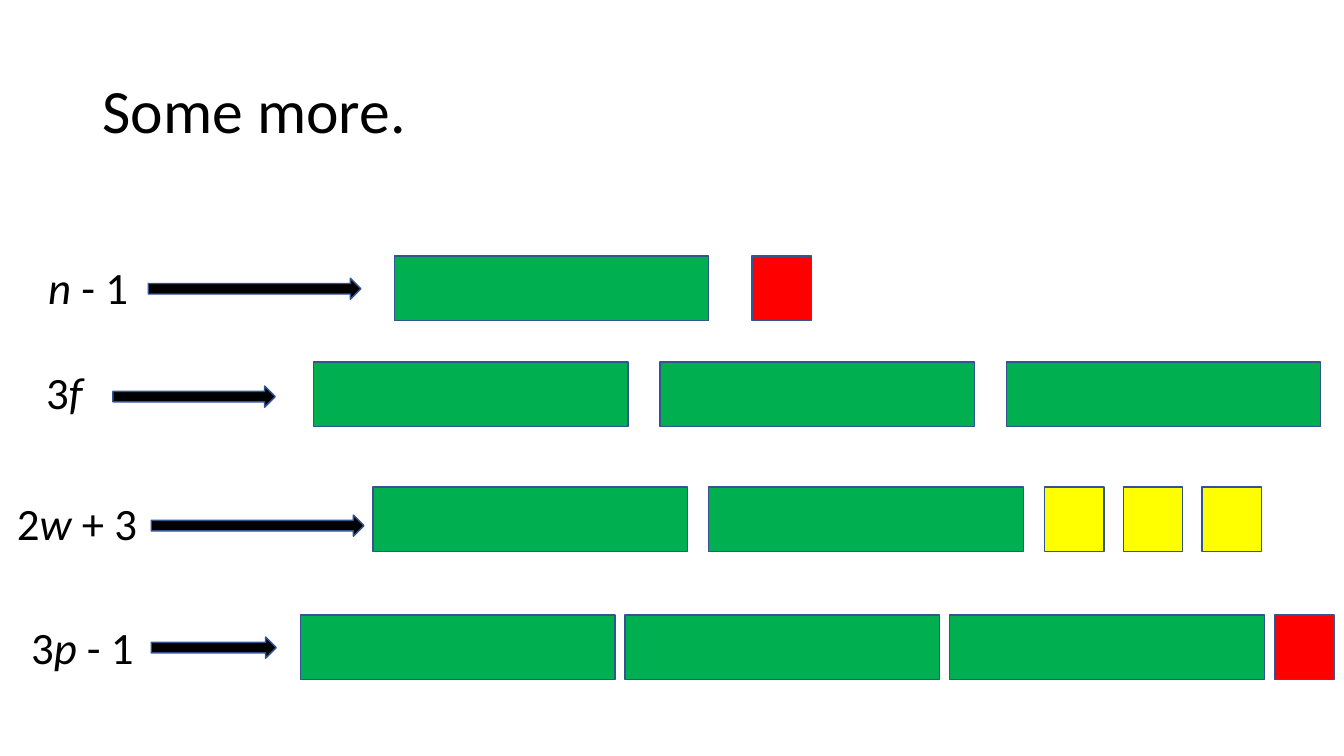
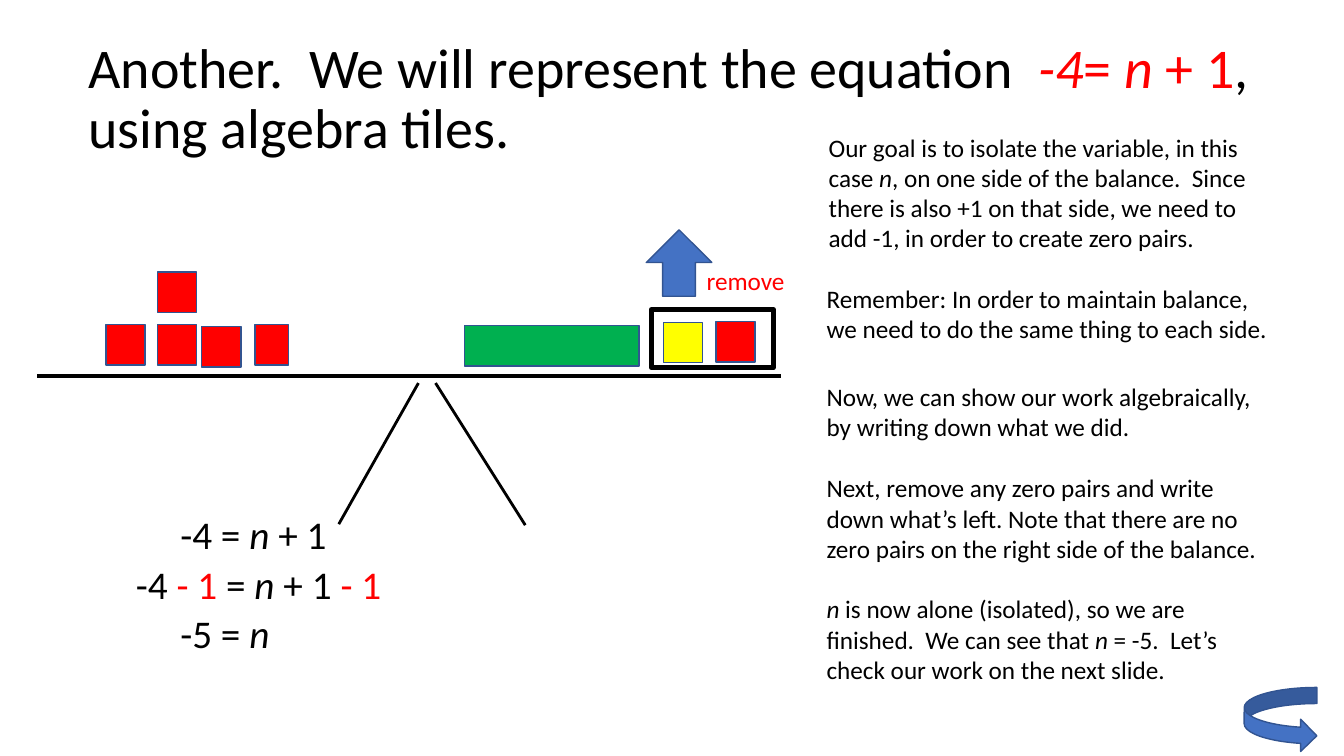
"""Build two slides on representing expressions and equations with algebra tiles."""
import pptx
import pptx.dml.color
import pptx.enum.shapes
import pptx.enum.text
import pptx.oxml.ns
import pptx.util
from lxml import etree

Inches = pptx.util.Inches
Pt = pptx.util.Pt
hex_color = pptx.dml.color.RGBColor.from_string
MSO_SHAPE = pptx.enum.shapes.MSO_SHAPE

BLACK, RED, YELLOW, GREEN = "000000", "FF0000", "FFFF00", "00B050"
BLUE, OUTLINE = "4472C4", "325491"
FONT = "Calibri"
TITLE_HEIGHT = 1.45


def add_text(slide, at, markup, size, title_style=False):
    """Add a text box; _ switches italics and | switches red in the markup."""
    frame = slide.shapes.add_textbox(*map(Inches, at)).text_frame
    frame.word_wrap = True
    paragraph = frame.paragraphs[0]
    paragraph.font.name = FONT
    paragraph.font.size = Pt(size)
    if title_style:
        frame.vertical_anchor = pptx.enum.text.MSO_ANCHOR.MIDDLE
        paragraph.line_spacing = 0.9
    for color_index, colored in enumerate(markup.split("|")):
        for italic_index, words in enumerate(colored.split("_")):
            if words:
                run = paragraph.add_run()
                run.text = words
                run.font.color.rgb = hex_color(RED if color_index % 2 else BLACK)
                if italic_index % 2:
                    run.font.italic = True


def add_shape(slide, kind, at, fill, line=OUTLINE, line_width=1):
    """Add an outlined preset shape, hollow when fill is None."""
    shape = slide.shapes.add_shape(kind, *map(Inches, at))
    shape.shadow.inherit = False
    if fill:
        shape.fill.solid()
        shape.fill.fore_color.rgb = hex_color(fill)
    else:
        shape.fill.background()
    shape.line.color.rgb = hex_color(line)
    shape.line.width = Pt(line_width)


deck = pptx.Presentation()
deck.slide_width = Inches(13.33)
deck.slide_height = Inches(7.5)
blank = deck.slide_layouts[6]

expressions = deck.slides.add_slide(blank)
add_text(expressions, (0.92, 0.4, 11.5, TITLE_HEIGHT), "Some more.", 44, True)

BAR_WIDTH, UNIT_WIDTH, TILE_HEIGHT, UNIT_PITCH = 3.12, 0.59, 0.64, 0.78
expression_rows = [
    ("_n_ - 1", (0.38, 2.15, 1.25), (1.47, 2.76, 2.11), 2.54, 3.91, 3.55, 1, 1, RED),
    ("3_f_", (0.36, 3.19, 0.98), (1.12, 3.83, 1.61), 3.59, 3.11, 3.435, 3, 0, None),
    ("2_w _+ 3", (0.07, 4.49, 1.46), (1.5, 5.11, 2.11), 4.83, 3.7, 3.33, 2, 3, YELLOW),
    ("3_p_ - 1", (0.21, 5.72, 1.44), (1.5, 6.32, 1.24), 6.1, 2.98, 3.22, 3, 1, RED),
]
for label, label_at, arrow_at, top, left, pitch, bars, units, unit_color in expression_rows:
    add_text(expressions, (*label_at, TITLE_HEIGHT), label, 32, True)
    add_shape(expressions, MSO_SHAPE.RIGHT_ARROW, (*arrow_at, 0.21), BLACK)
    for bar in range(bars):
        add_shape(expressions, MSO_SHAPE.RECTANGLE,
                  (left + bar * pitch, top, BAR_WIDTH, TILE_HEIGHT), GREEN)
    for unit in range(units):
        add_shape(expressions, MSO_SHAPE.RECTANGLE,
                  (left + bars * pitch + unit * UNIT_PITCH, top, UNIT_WIDTH, TILE_HEIGHT),
                  unit_color)

equation = deck.slides.add_slide(blank)
add_text(equation, (0.78, 0.27, 11.78, TITLE_HEIGHT),
         "Another.  We will represent the equation  |_-4_= _n_ + 1|, using algebra tiles.",
         40, True)

balance_tiles = [
    (1.56, 2.7, 0.39, RED),
    (1.05, 3.22, 0.39, RED),
    (1.56, 3.22, 0.39, RED),
    (2, 3.24, 0.39, RED),
    (2.53, 3.22, 0.33, RED),
    (4.61, 3.23, 1.73, GREEN),
    (6.58, 3.2, 0.39, YELLOW),
    (7.1, 3.19, 0.39, RED),
]
for left, top, width, color in balance_tiles:
    add_shape(equation, MSO_SHAPE.RECTANGLE, (left, top, width, 0.4), color)

balance_lines = [
    (0.37, 3.73, 7.75, 3.73, 3.25),
    (3.36, 5.2, 4.15, 3.8, 2),
    (4.32, 3.8, 5.21, 5.21, 2),
]
for *ends, width in balance_lines:
    beam = equation.shapes.add_connector(
        pptx.enum.shapes.MSO_CONNECTOR.STRAIGHT, *map(Inches, ends))
    beam.line.color.rgb = hex_color(BLACK)
    beam.line.width = Pt(width)
    etree.SubElement(beam.element.spPr, pptx.oxml.ns.qn("a:effectLst"))

add_shape(equation, MSO_SHAPE.RECTANGLE, (6.46, 3.07, 1.21, 0.58), None, BLACK, 3.5)
add_shape(equation, MSO_SHAPE.UP_ARROW, (6.41, 2.28, 0.65, 0.66), BLUE)
add_shape(equation, MSO_SHAPE.CURVED_RIGHT_ARROW, (12.34, 6.82, 0.72, 0.64), BLUE)
add_text(equation, (6.91, 2.58, 1.01, 0.4), "|remove|", 18)

algebra_steps = [
    (1.69, 5.01, "-4 = _n_ + 1"),
    (1.25, 5.51, "-4 |- 1 |= _n_ + 1 |- 1|"),
    (1.69, 6, "-5 = _n_"),
]
for left, top, step in algebra_steps:
    add_text(equation, (left, top, 3.2, 0.57), step, 28)

explanations = [
    (8.12, 1.26, 4.44, 1.31,
     "Our goal is to isolate the variable, in this case _n_, on one side of the balance.  "
     "Since there is also +1 on that side, we need to add -1, in order to create zero pairs."),
    (8.1, 2.76, 4.62, 0.71,
     "Remember: In order to maintain balance, we need to do the same thing to each side."),
    (8.1, 3.73, 4.44, 0.71,
     "Now, we can show our work algebraically, by writing down what we did."),
    (8.1, 4.64, 4.6, 1.01,
     "Next, remove any zero pairs and write down what’s left. Note that there are no "
     "zero pairs on the right side of the balance."),
    (8.1, 5.84, 4.44, 1.01,
     "_n_ is now alone (isolated), so we are finished.  We can see that _n_ = -5.  "
     "Let’s check our work on the next slide."),
]
for *at, explanation in explanations:
    add_text(equation, at, explanation, 18)

deck.save("out.pptx")
